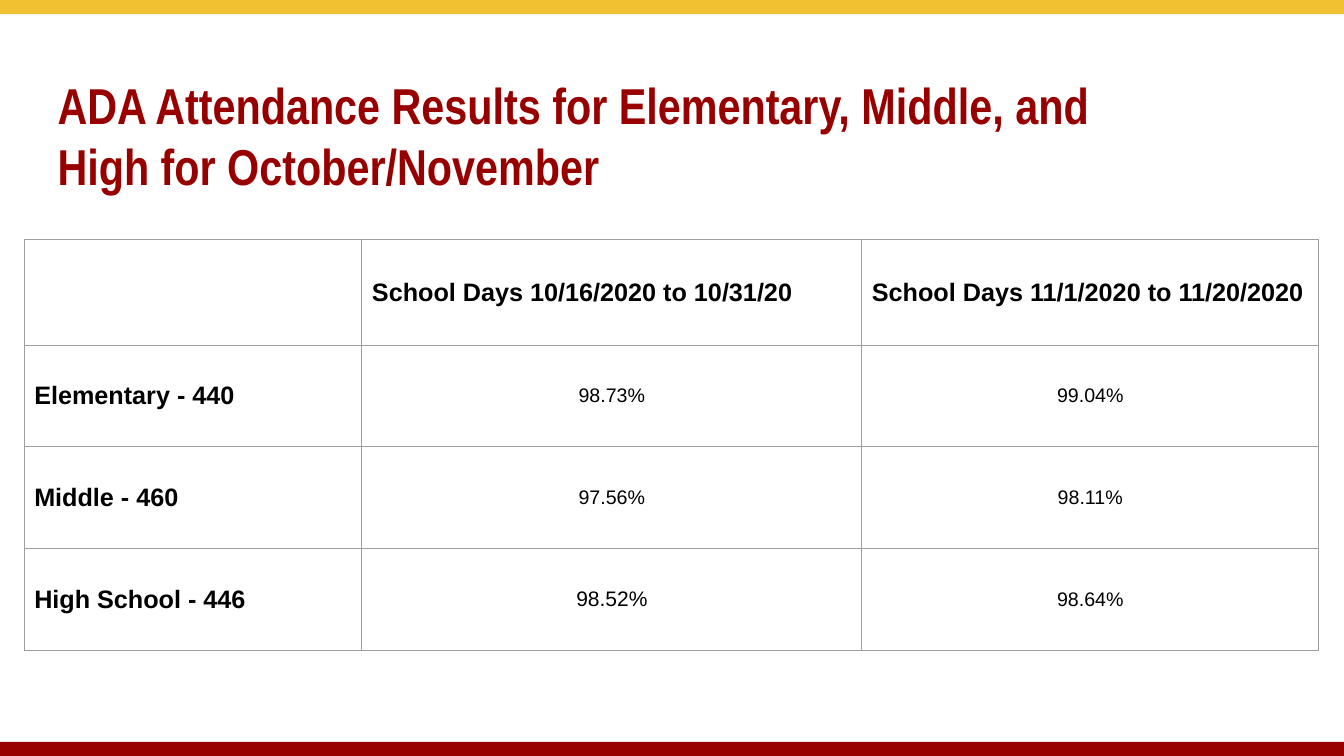
from lxml import etree
from pptx import Presentation
from pptx import util as u
from pptx.dml.color import RGBColor
from pptx.enum import shapes, text
from pptx.oxml import ns

GOLD = RGBColor(0xF1, 0xC1, 0x31)
CRIMSON = RGBColor(0x98, 0x00, 0x00)
BLACK = RGBColor(0x00, 0x00, 0x00)
GRAY = RGBColor(0x9E, 0x9E, 0x9E)

BAR_HEIGHT = 1.87
COLUMN_WIDTHS = (25.13, 37.2, 34)
ROW_HEIGHTS = (13.95, 13.47, 13.47, 13.47)
ATTENDANCE = (
    ("", "School Days 10/16/2020 to 10/31/20", "School Days 11/1/2020 to 11/20/2020"),
    ("Elementary - 440", "98.73%", "99.04%"),
    ("Middle - 460", "97.56%", "98.11%"),
    ("High School - 446", "98.52%", "98.64%"),
)
RATE_SIZES = {"98.52%": 15}


def write(frame, words, font="Arial", size=18, bold=True, color=BLACK,
          align=text.PP_ALIGN.LEFT):
    para = frame.paragraphs[0]
    para.alignment = align
    para.font.size = u.Pt(size)
    if words:
        span = para.add_run()
        span.text = words
        span.font.name = font
        span.font.size = u.Pt(size)
        span.font.bold = bold
        span.font.color.rgb = color


def outline_cell(cell, color, width):
    """Draw all four borders, which must precede the cell's fill in the XML."""
    properties = cell._tc.get_or_add_tcPr()
    for position, side in enumerate(("lnL", "lnR", "lnT", "lnB")):
        line = etree.Element(ns.qn(f"a:{side}"), w=str(u.Pt(width)))
        fill = etree.SubElement(line, ns.qn("a:solidFill"))
        etree.SubElement(fill, ns.qn("a:srgbClr"), val=str(color))
        properties.insert(position, line)


class AttendanceSlide:
    """Places elements by percentages of the slide's width and height."""

    def __init__(self, deck):
        self.deck = deck
        self.page = deck.slides.add_slide(deck.slide_layouts[5])

    def across(self, share):
        return round(self.deck.slide_width * share / 100)

    def down(self, share):
        return round(self.deck.slide_height * share / 100)

    def area(self, left, top, width, height):
        return self.across(left), self.down(top), self.across(width), self.down(height)

    def bar(self, top, color):
        box = self.page.shapes.add_shape(
            shapes.MSO_SHAPE.RECTANGLE, *self.area(0, top, 100, BAR_HEIGHT))
        box.shadow.inherit = False
        box.fill.solid()
        box.fill.fore_color.rgb = color
        box.line.fill.background()

    def title(self, words, left, top, width, height):
        box = self.page.shapes.title
        box.left, box.top, box.width, box.height = self.area(left, top, width, height)
        frame = box.text_frame
        frame.word_wrap = True
        frame.auto_size = text.MSO_AUTO_SIZE.NONE
        frame.vertical_anchor = text.MSO_ANCHOR.TOP
        frame.margin_left = frame.margin_right = frame.margin_bottom = 0
        frame.margin_top = u.Inches(0.01)
        write(frame, words, font="Arial Narrow", size=36, color=CRIMSON)

    def table(self, rows, left, top):
        grid = self.page.shapes.add_table(
            len(rows), len(COLUMN_WIDTHS),
            *self.area(left, top, sum(COLUMN_WIDTHS), sum(ROW_HEIGHTS))).table
        grid.first_row = grid.horz_banding = False
        for column, share in zip(grid.columns, COLUMN_WIDTHS):
            column.width = self.across(share)
        for row, share in zip(grid.rows, ROW_HEIGHTS):
            row.height = self.down(share)
        for r, row in enumerate(rows):
            for c, words in enumerate(row):
                self.cell(grid.cell(r, c), words, is_rate=r > 0 and c > 0)

    def cell(self, cell, words, is_rate):
        cell.fill.background()
        cell.vertical_anchor = text.MSO_ANCHOR.MIDDLE
        cell.margin_left = cell.margin_right = u.Inches(0.1)
        cell.margin_top = cell.margin_bottom = u.Inches(0.1)
        outline_cell(cell, GRAY, 0.75)
        if is_rate:
            write(cell.text_frame, words, size=RATE_SIZES.get(words, 14),
                  bold=False, align=text.PP_ALIGN.CENTER)
        else:
            write(cell.text_frame, words)


def main():
    deck = Presentation()
    deck.slide_width, deck.slide_height = u.Inches(13.33), u.Inches(7.5)
    slide = AttendanceSlide(deck)
    slide.bar(0, GOLD)
    slide.bar(100 - BAR_HEIGHT, CRIMSON)
    slide.title("ADA Attendance Results for Elementary, Middle, and High for "
                "October/November", 4.28, 9.73, 83.87, 17.2)
    slide.table(ATTENDANCE, 1.8, 31.7)
    deck.save("out.pptx")


if __name__ == "__main__":
    main()
